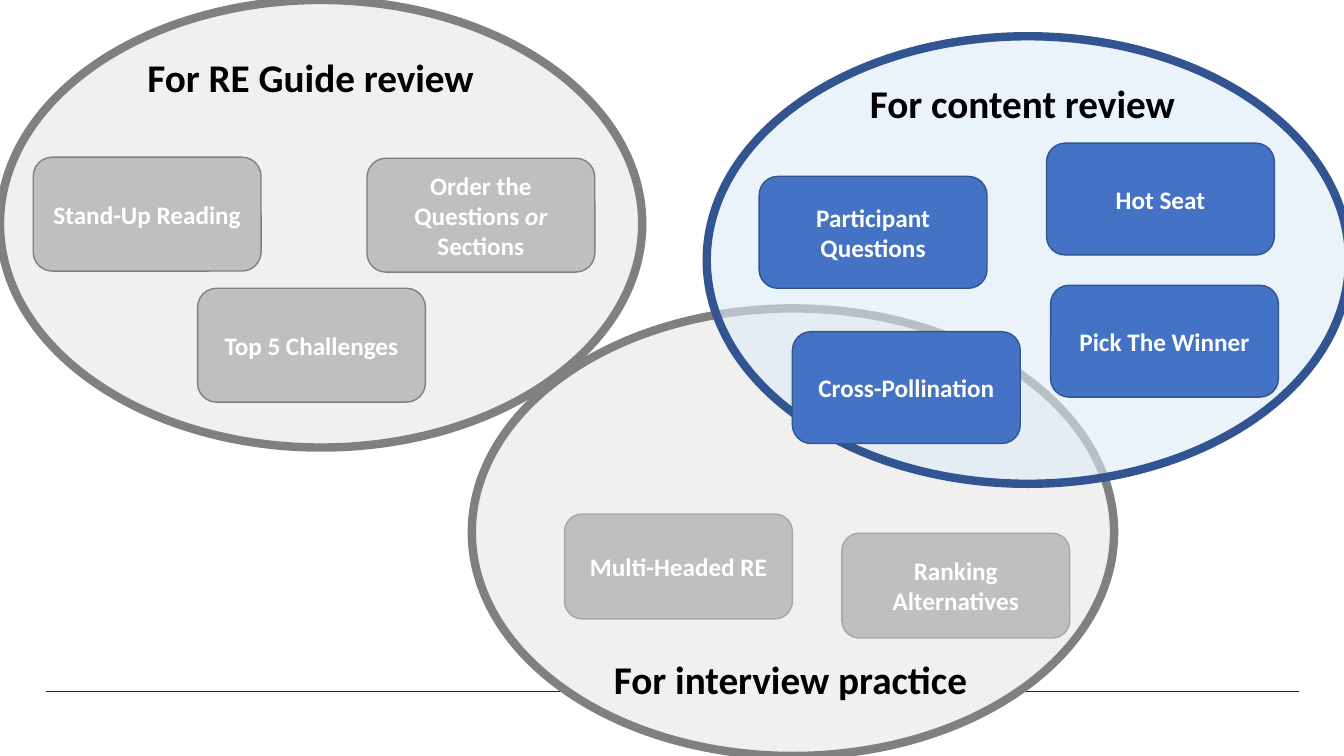
from pptx import Presentation
from pptx.dml.color import RGBColor
from pptx.enum.shapes import MSO_CONNECTOR, MSO_SHAPE
from pptx.enum.text import MSO_ANCHOR, PP_ALIGN
from pptx.oxml.ns import qn
from pptx.util import Inches, Pt
from lxml.etree import SubElement

# Content: each circle has a heading and its activities, all placed by left, top.
# An activity is a list of text parts; every second part is italic.
CIRCLES = [
    {"at": (0, 0), "style": "review", "box_height": 1.13,
     "heading": ("For RE Guide review", 1.14, 0.42),
     "activities": [(["Stand-Up Reading"], 0.33, 1.56),
                    (["Order the Questions ", "or", " Sections"], 3.64, 1.57),
                    (["Top 5 Challenges"], 1.96, 2.86)]},
    {"at": (4.68, 3.06), "style": "interview", "box_height": 1.04,
     "heading": ("For interview practice", 5.9, 6.39),
     "activities": [(["Multi-Headed RE"], 5.6, 5.1),
                    (["Ranking Alternatives"], 8.35, 5.29)]},
    {"at": (7.01, 0.36), "style": "content", "box_height": 1.11,
     "heading": ("For content review", 8.2, 0.68),
     "activities": [(["Hot Seat"], 10.38, 1.42),
                    (["Pick The Winner"], 10.42, 2.83),
                    (["Participant Questions"], 7.53, 1.75),
                    (["Cross-Pollination"], 7.86, 3.29)]},
]
COLORS = {"rule": "411044", "heading": "000000", "activity": "FFFFFF"}
STYLES = {
    "review": {"fill": "E7E6E6", "alpha": 60, "ring": "808080",
               "box": "BFBFBF", "edge": "808080"},
    "interview": {"fill": "F1F0F0", "alpha": 100, "ring": "808080",
                  "box": "BFBFBF", "edge": "A6A6A6"},
    "content": {"fill": "DEEBF7", "alpha": 60, "ring": "325491",
                "box": "4472C4", "edge": "325491"},
}
FORMATS = {
    "heading": {"name": "Calibri", "size": Pt(28), "bold": True},
    "activity": {"name": "Calibri", "size": Pt(18), "bold": True},
}
CIRCLE_SIZE = (6.37, 4.44)
HEADING_SIZE = (3.88, 0.69)
BOX_WIDTH = 2.26
RULE_LEFT, RULE_RIGHT, RULE_TOP = 0.46, 12.88, 6.86

prs = Presentation()
prs.slide_width, prs.slide_height = Inches(13.33), Inches(7.5)
slide = prs.slides.add_slide(prs.slide_layouts[6])


def add_outline(kind, position, size, fill=None, line=None, width=1):
    outline = slide.shapes.add_shape(kind, *map(Inches, (*position, *size)))
    outline.shadow.inherit = False
    if fill:
        outline.fill.solid()
        outline.fill.fore_color.rgb = RGBColor.from_string(fill)
        outline.line.color.rgb = RGBColor.from_string(line)
        outline.line.width = Pt(width)
    else:
        outline.fill.background()
        outline.line.fill.background()
    return outline


def write(label, parts, role):
    frame = label.text_frame
    frame.word_wrap = True
    frame.vertical_anchor = MSO_ANCHOR.MIDDLE
    paragraph = frame.paragraphs[0]
    paragraph.alignment = PP_ALIGN.CENTER
    for number, part in enumerate(parts):
        run = paragraph.add_run()
        run.text = part
        for attribute, value in FORMATS[role].items():
            setattr(run.font, attribute, value)
        run.font.italic = number % 2 == 1
        run.font.color.rgb = RGBColor.from_string(COLORS[role])


# Footer rule behind everything
rule = slide.shapes.add_connector(
    MSO_CONNECTOR.STRAIGHT,
    *map(Inches, (RULE_RIGHT, RULE_TOP, RULE_LEFT, RULE_TOP)))
rule.line.color.rgb = RGBColor.from_string(COLORS["rule"])
rule.line.width = Pt(1.25)
SubElement(rule.element.spPr, qn("a:effectLst"))

# Circles with their headings and activities
for circle in CIRCLES:
    style = STYLES[circle["style"]]
    ring = add_outline(MSO_SHAPE.OVAL, circle["at"], CIRCLE_SIZE,
                       style["fill"], style["ring"], 6)
    if style["alpha"] < 100:
        tint = ring.element.spPr.find(qn("a:solidFill"))[0]
        SubElement(tint, qn("a:alpha"), val=str(style["alpha"] * 1000))

    title, *title_position = circle["heading"]
    heading = add_outline(MSO_SHAPE.ROUNDED_RECTANGLE, title_position, HEADING_SIZE)
    write(heading, [title], "heading")

    for parts, *position in circle["activities"]:
        activity = add_outline(MSO_SHAPE.ROUNDED_RECTANGLE, position,
                               (BOX_WIDTH, circle["box_height"]),
                               style["box"], style["edge"])
        write(activity, parts, "activity")

prs.save("out.pptx")
